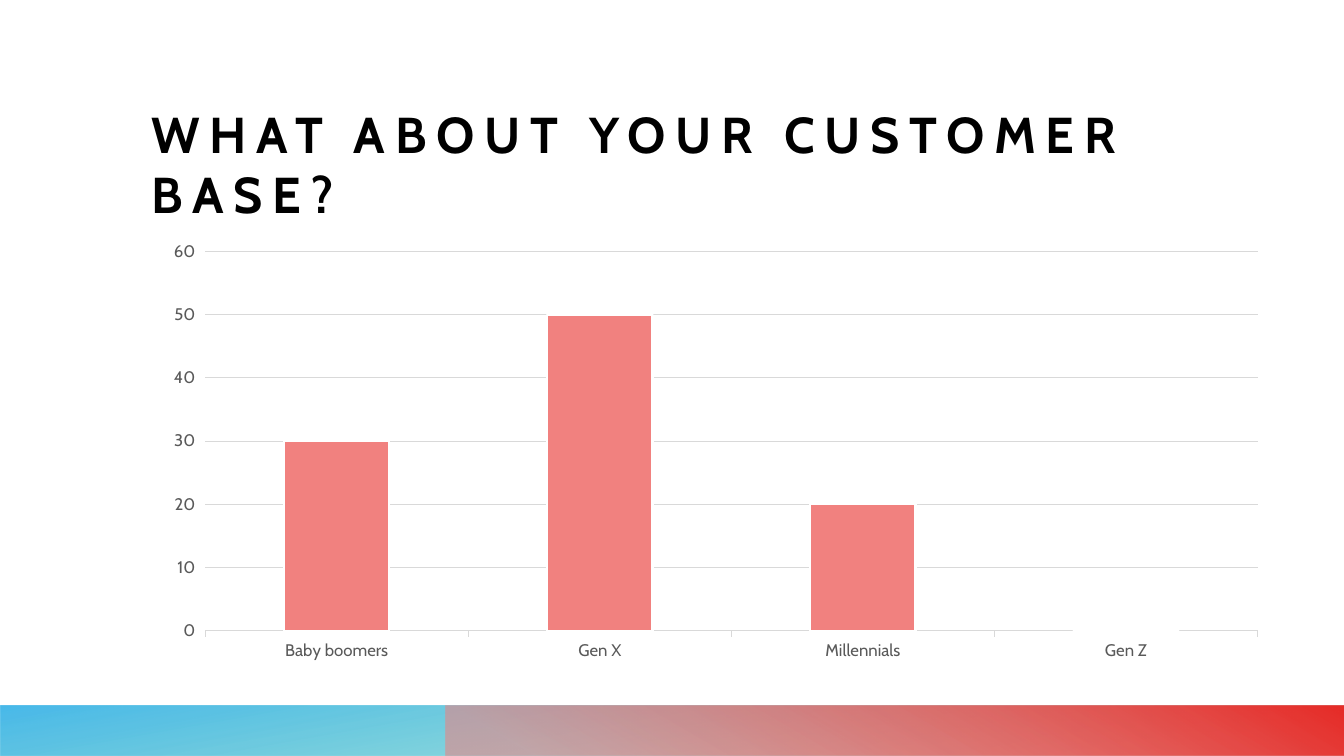
"""Build a slide with a column chart of customers by generation."""
from lxml import etree
from pptx import Presentation
from pptx import util as u
from pptx.chart.data import CategoryChartData
from pptx.dml.color import RGBColor
from pptx.enum import chart as charts, shapes, text
from pptx.oxml import ns

TITLE = "WHAT ABOUT YOUR CUSTOMER BASE?"
CUSTOMERS = {"Baby boomers": 30, "Gen X": 50, "Millennials": 20, "Gen Z": 0}
FONT = "Cabin"
BLACK, GREY, RULE, WHITE, CORAL = "000000", "595959", "D9D9D9", "FFFFFF", "F1817F"
WIDTH, HEIGHT = 960, 540
BAND_HEIGHT = 36
LEFT, CONTENT_WIDTH = 108, 806.4
BANDS = [
    {"left": 0, "rotation": 180, "angle": 100,
     "stops": [(14, "14B4A3", 28), (100, "29ADE7", 85)]},
    {"left": 318, "rotation": 0, "angle": 240,
     "stops": [(9, CORAL, 55), (99, "E72D29", 100)]},
]


def colour(value):
    return RGBColor.from_string(value)


def style_font(font, size, value):
    font.name, font.size = FONT, u.Pt(size)
    font.color.rgb = colour(value)


def style_line(line, value, width):
    line.color.rgb = colour(value)
    line.width = u.Pt(width)


def child(parent, tag, **attributes):
    return etree.SubElement(parent, ns.qn(tag), {key: str(val) for key, val in attributes.items()})


def add_band(page, left, rotation, angle, stops):
    band = page.shapes.add_shape(shapes.MSO_SHAPE.RECTANGLE, u.Pt(left), u.Pt(HEIGHT - BAND_HEIGHT),
                                 u.Pt(WIDTH - left), u.Pt(BAND_HEIGHT))
    band.shadow.inherit = False
    band.line.fill.background()
    band.rotation = rotation
    properties = band._element.spPr
    properties.find(ns.qn("a:xfrm")).set("flipH", "1")
    gradient = child(properties, "a:gradFill", rotWithShape=1)
    stop_list = child(gradient, "a:gsLst")
    for position, value, opacity in stops:
        stop = child(stop_list, "a:gs", pos=position * 1000)
        child(child(stop, "a:srgbClr", val=value), "a:alpha", val=opacity * 1000)
    child(gradient, "a:lin", ang=angle * 60000, scaled=0)
    properties.find(ns.qn("a:ln")).addprevious(gradient)


def add_title(page):
    box = page.shapes.add_textbox(u.Pt(LEFT), u.Pt(62.64), u.Pt(CONTENT_WIDTH), u.Pt(97.2))
    frame = box.text_frame
    frame.word_wrap = True
    frame.vertical_anchor = text.MSO_ANCHOR.BOTTOM
    frame.margin_left = frame.margin_right = frame.margin_top = frame.margin_bottom = 0
    frame.text = TITLE
    span = frame.paragraphs[0].runs[0]
    style_font(span.font, 36, BLACK)
    span.font.bold = True
    span.font._element.set("spc", "700")


def add_customer_chart(page):
    data = CategoryChartData()
    data.categories = list(CUSTOMERS)
    data.add_series("Series 1", list(CUSTOMERS.values()))
    chart = page.shapes.add_chart(charts.XL_CHART_TYPE.COLUMN_CLUSTERED, u.Pt(LEFT), u.Pt(166.32),
                                  u.Pt(CONTENT_WIDTH), u.Pt(311.76), data).chart
    chart.has_title = chart.has_legend = False
    style_font(chart.font, 10, BLACK)

    plot = chart.plots[0]
    plot.gap_width = 150
    plot.vary_by_categories = False
    columns = plot.series[0]
    columns.format.fill.solid()
    columns.format.fill.fore_color.rgb = colour(CORAL)
    style_line(columns.format.line, WHITE, 1.5)

    for axis in (chart.category_axis, chart.value_axis):
        style_font(axis.tick_labels.font, 12, GREY)
        axis.major_tick_mark = charts.XL_TICK_MARK.OUTSIDE
    style_line(chart.category_axis.format.line, RULE, 0.75)

    values = chart.value_axis
    values.minimum_scale, values.maximum_scale, values.major_unit = 0, 60, 10
    values.format.line.fill.background()
    values.has_major_gridlines = True
    style_line(values.major_gridlines.format.line, RULE, 0.75)


def main():
    deck = Presentation()
    deck.slide_width, deck.slide_height = u.Pt(WIDTH), u.Pt(HEIGHT)
    page = deck.slides.add_slide(deck.slide_layouts[6])
    for band in BANDS:
        add_band(page, **band)
    add_title(page)
    add_customer_chart(page)
    deck.save("out.pptx")


if __name__ == "__main__":
    main()
